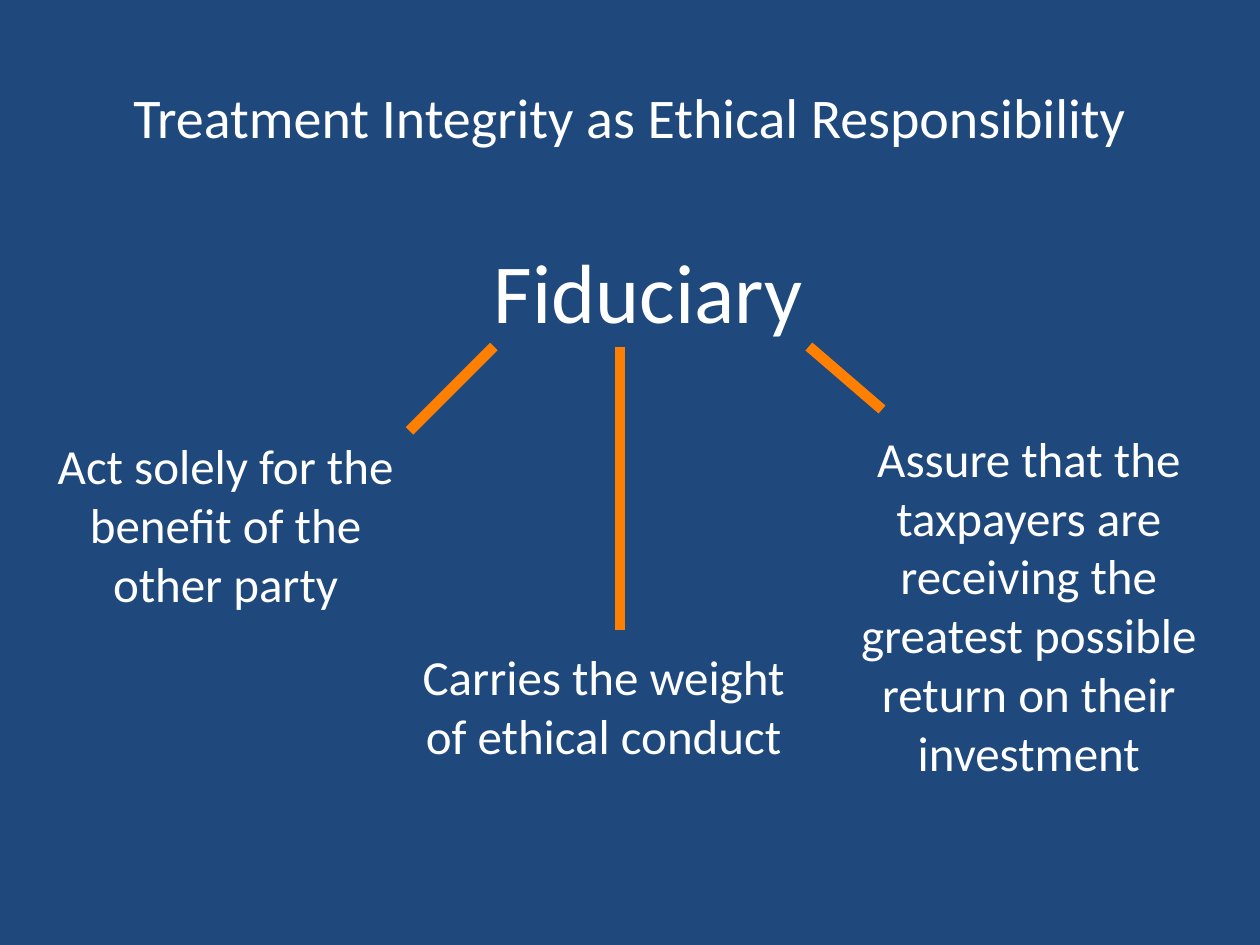
from lxml.etree import SubElement
from pptx import Presentation
from pptx.dml.color import RGBColor
from pptx.enum.shapes import MSO_CONNECTOR
from pptx.enum.text import MSO_ANCHOR, PP_ALIGN
from pptx.oxml.ns import qn
from pptx.util import Inches, Pt

NAVY, WHITE, ORANGE = "1F497D", "FFFFFF", "FF8000"


def color(value):
    return RGBColor.from_string(value)


def add_text(s, text, box, size=28, align=PP_ALIGN.CENTER, anchor=MSO_ANCHOR.TOP):
    tf = s.shapes.add_textbox(*map(Inches, box)).text_frame
    tf.word_wrap = True
    tf.vertical_anchor = anchor
    p = tf.paragraphs[0]
    p.alignment = align
    r = p.add_run()
    r.text = text
    r.font.name = "Calibri"
    r.font.size = Pt(size)
    r.font.color.rgb = color(WHITE)


def add_branch(s, start, end):
    line = s.shapes.add_connector(MSO_CONNECTOR.STRAIGHT, *map(Inches, start + end))
    line.line.color.rgb = color(ORANGE)
    line.line.width = Pt(6)
    SubElement(line._element.spPr, qn("a:effectLst"))


def add_title(s, box):
    add_text(s, "Treatment Integrity as Ethical Responsibility", box,
             size=32, anchor=MSO_ANCHOR.MIDDLE)


def add_duties(s, box):
    x, y, w, h = box
    add_text(s, "Fiduciary", (x + 3.57, y, 2.67, 0.91), size=48, align=PP_ALIGN.LEFT)
    duties = [
        ("Act solely for the benefit of the other party",
         (0, 1.56, 3.08, 1.5), 3.67, (3, 1.57)),
        ("Carries the weight of ethical conduct",
         (3, 3.23, 3.08, 1.04), 4.67, (4.67, 3.15)),
        ("Assure that the taxpayers are receiving the greatest possible "
         "return on their investment",
         (6.33, 1.5, w - 6.33, h - 1.5), 6.17, (6.75, 1.4)),
    ]
    for text, (left, top, width, height), start, (end_x, end_y) in duties:
        add_text(s, text, (x + left, y + top, width, height))
        add_branch(s, (x + start, y + 0.9), (x + end_x, y + end_y))


def main():
    prs = Presentation()
    prs.slide_width, prs.slide_height = Inches(10), Inches(7.5)
    s = prs.slides.add_slide(prs.slide_layouts[6])
    s.background.fill.solid()
    s.background.fill.fore_color.rgb = color(NAVY)
    add_title(s, (0.5, 0.3, 9, 1.25))
    add_duties(s, (0.25, 1.85, 9.5, 4.4))
    prs.save("out.pptx")


if __name__ == "__main__":
    main()
